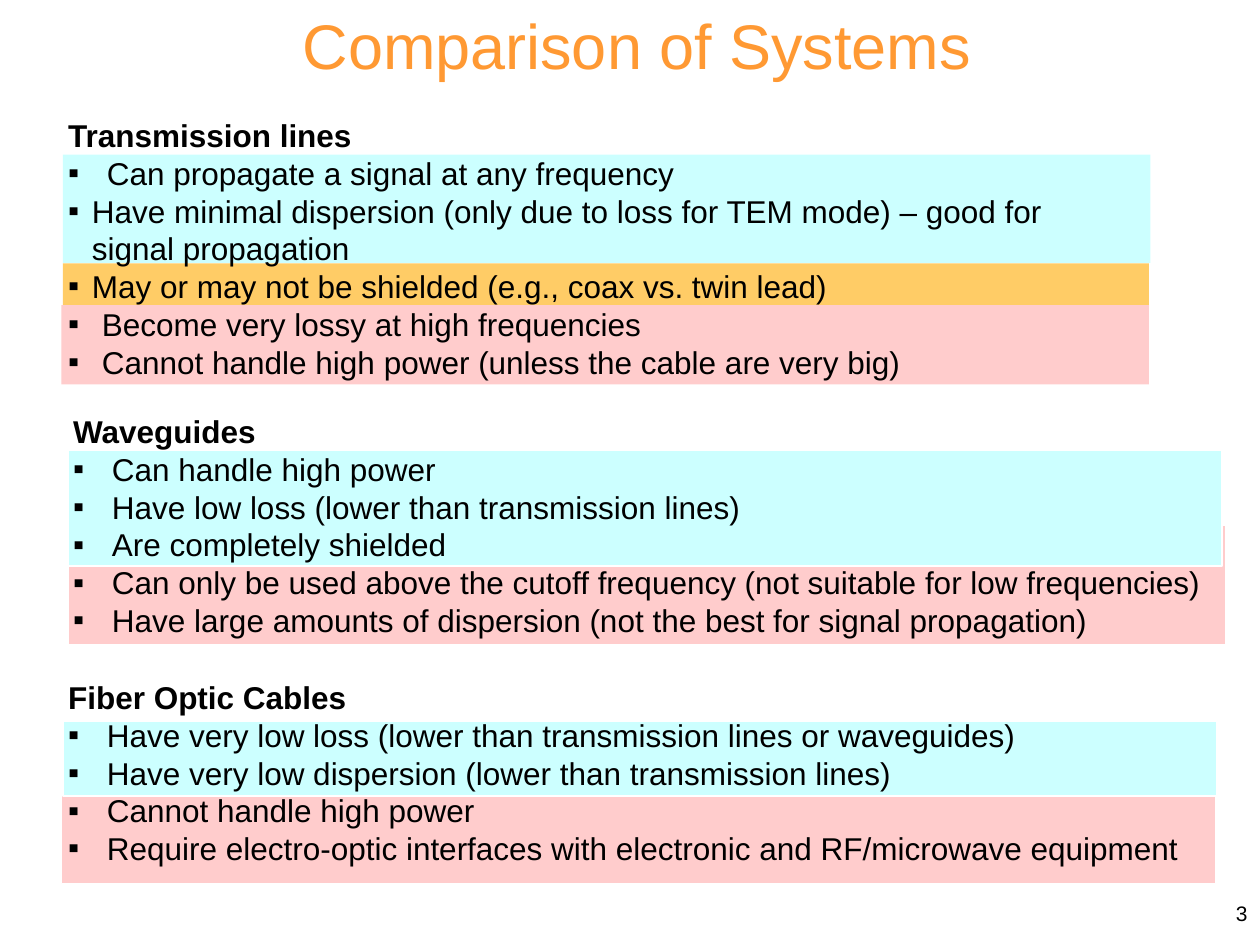
from lxml.etree import SubElement
from pptx import Presentation
from pptx.dml.color import RGBColor
from pptx.enum.shapes import MSO_SHAPE as Preset
from pptx.enum.text import MSO_ANCHOR as Anchor, MSO_AUTO_SIZE as AutoSize, PP_ALIGN as Align
from pptx.oxml.ns import qn
from pptx.util import Cm, Pt

COLORS = {"title": "FF9933", "text": "000000", "good": "CCFFFF",
          "neutral": "FFCC66", "bad": "FFCCCC", "edge": "FFFFFF"}
WIDE, HANGING, MEDIUM = 0.78, 0.48, 0.68

SYSTEMS = [
    {"heading": "Transmission lines",
     "box": (1.12, 2.21, 21.67, 5.64),
     "edged": False,
     "bands": [("neutral", (1.27, 5.31, 21.89, 0.86)),
               ("bad", (1.24, 6.15, 21.92, 1.6)),
               ("good", (1.27, 3.12, 21.92, 2.18))],
     "items": [("Can propagate a signal at any frequency", WIDE),
               ("Have minimal dispersion (only due to loss for TEM mode) – good for signal propagation", HANGING),
               ("May or may not be shielded (e.g., coax vs. twin lead)", HANGING),
               ("Become very lossy at high frequencies", MEDIUM),
               ("Cannot handle high power (unless the cable are very big)", MEDIUM)]},
    {"heading": "Waveguides",
     "box": (1.22, 8.18, 23.67, 4.83),
     "edged": True,
     "bands": [("bad", (1.37, 10.59, 23.34, 2.41)),
               ("good", (1.37, 9.07, 23.27, 2.34))],
     "items": [("Can handle high power", WIDE),
               ("Have low loss (lower than transmission lines)", WIDE),
               ("Are completely shielded", WIDE),
               ("Can only be used above the cutoff frequency (not suitable for low frequencies)", WIDE),
               ("Have large amounts of dispersion (not the best for signal propagation)", WIDE)]},
    {"heading": "Fiber Optic Cables",
     "box": (1.12, 13.54, 23.67, 4.06),
     "edged": True,
     "bands": [("bad", (1.24, 16.03, 23.27, 1.78)),
               ("good", (1.27, 14.53, 23.27, 1.52))],
     "items": [("Have very low loss (lower than transmission lines or waveguides)", WIDE),
               ("Have very low dispersion (lower than transmission lines)", WIDE),
               ("Cannot handle high power", WIDE),
               ("Require electro-optic interfaces with electronic and RF/microwave equipment", WIDE)]},
]


class SlideBuilder:
    """Draws styled elements on the current slide."""

    font_name = "Arial"

    def __init__(self, slide):
        self.slide = slide

    def color(self, name):
        return RGBColor.from_string(COLORS[name])

    def place(self, shape, box):
        shape.left, shape.top, shape.width, shape.height = map(Cm, box)

    def prepare(self, shape, anchor=Anchor.TOP):
        frame = shape.text_frame
        frame.auto_size = AutoSize.NONE
        frame.word_wrap = True
        frame.vertical_anchor = anchor
        return frame

    def style(self, paragraph, size, color="text", bold=False, align=Align.LEFT):
        paragraph.alignment = align
        paragraph.space_before = Pt(0)
        font = paragraph.font
        font.name, font.size, font.bold = self.font_name, Pt(size), bold
        font.color.rgb = self.color(color)

    def bullet(self, paragraph, indent=0, character=None):
        properties = paragraph._p.get_or_add_pPr()
        properties.set("marL", str(Cm(indent)))
        properties.set("indent", str(-Cm(indent)))
        if character:
            SubElement(properties, qn("a:buFont"), typeface=self.font_name)
            SubElement(properties, qn("a:buChar"), char=character)
        else:
            SubElement(properties, qn("a:buNone"))

    def title(self, text, box):
        shape = self.slide.shapes.title
        self.place(shape, box)
        paragraph = self.prepare(shape).paragraphs[0]
        paragraph.text = text
        self.style(paragraph, 36, "title", align=Align.CENTER)

    def band(self, color, box, edged):
        shape = self.slide.shapes.add_shape(Preset.RECTANGLE, *map(Cm, box))
        shape.shadow.inherit = False
        shape.fill.solid()
        shape.fill.fore_color.rgb = self.color(color)
        if edged:
            shape.line.color.rgb = self.color("edge")
            shape.line.width = Pt(1)
        else:
            shape.line.fill.background()

    def bullet_list(self, shape, heading, items, box):
        self.place(shape, box)
        shape._element.getparent().append(shape._element)
        frame = self.prepare(shape)
        paragraph = frame.paragraphs[0]
        paragraph.text = heading
        self.bullet(paragraph)
        self.style(paragraph, 18, bold=True)
        for text, indent in items:
            paragraph = frame.add_paragraph()
            paragraph.text = text
            self.bullet(paragraph, indent, "▪")
            self.style(paragraph, 18)

    def page_number(self, text, box):
        shape = self.slide.shapes.add_textbox(*map(Cm, box))
        paragraph = self.prepare(shape, Anchor.MIDDLE).paragraphs[0]
        paragraph.text = text
        self.style(paragraph, 12, align=Align.RIGHT)


def main():
    presentation = Presentation()
    presentation.slide_width, presentation.slide_height = Cm(25.4), Cm(19.05)
    slide = presentation.slides.add_slide(presentation.slide_layouts.get_by_name("Comparison"))
    builder = SlideBuilder(slide)
    builder.title("Comparison of Systems", (4.42, 0, 16.84, 1.78))
    *bodies, spare = list(slide.placeholders)[1:]
    spare._element.getparent().remove(spare._element)
    for body, system in zip(bodies, SYSTEMS):
        for color, box in system["bands"]:
            builder.band(color, box, system["edged"])
        builder.bullet_list(body, system["heading"], system["items"], system["box"])
    builder.page_number("3", (20.12, 17.78, 5.28, 1.27))
    presentation.save("out.pptx")


if __name__ == "__main__":
    main()
